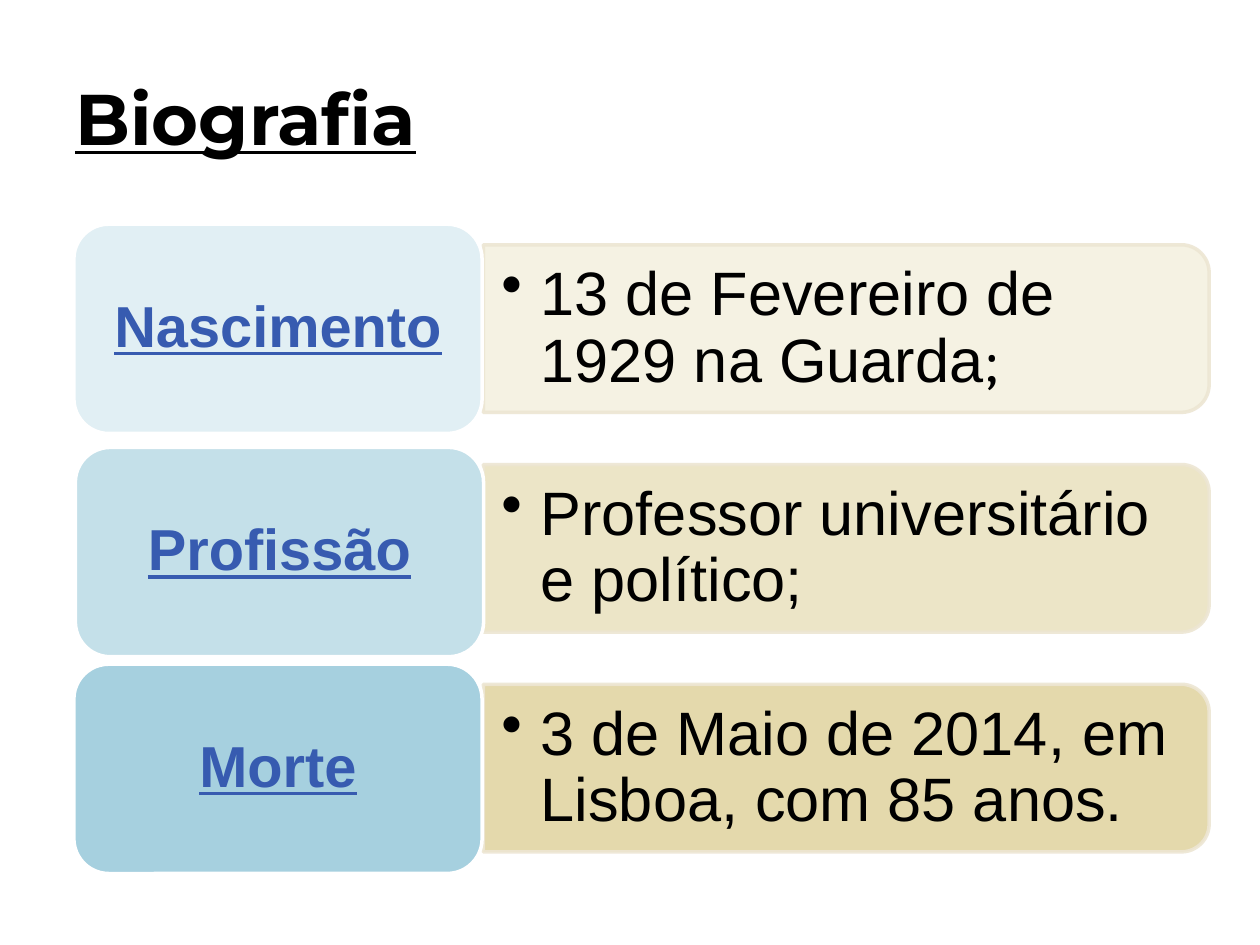
from dataclasses import dataclass

from lxml import etree
from pptx import Presentation
from pptx.dml import color
from pptx.enum import shapes, text
from pptx.oxml import ns
from pptx.util import Cm, Pt

ROW_PITCH = 4.43
PANEL_WIDTH, PANEL_LENGTH = 3.38, 14.63


@dataclass
class Fact:
    label: str
    detail: str
    label_fill: str
    detail_fill: str
    left: float
    top: float
    ending: str = ""  # closing mark set in Cambria


FACTS = [
    Fact("Nascimento", "13 de Fevereiro de 1929 na Guarda", "E1EFF4", "F5F1E0", 1.49, 4.52, ";"),
    Fact("Profissão", "Professor universitário e político;", "C4E0E9", "EBE3C2", 1.52, 9.02),
    Fact("Morte", "3 de Maio de 2014, em Lisboa, com 85 anos.", "A6D0DF", "E2D5A3", 1.49, 13.39),
]


def rgb(value: str) -> color.RGBColor:
    return color.RGBColor.from_string(value)


def set_font(font, name: str, size: float, hex_color: str, heading: bool = False) -> None:
    font.name, font.size = name, Pt(size)
    font.color.rgb = rgb(hex_color)
    font.bold = font.underline = heading


def set_frame(frame, side: float, vertical: float) -> None:
    frame.word_wrap = True
    frame.vertical_anchor = text.MSO_ANCHOR.MIDDLE
    frame.margin_left = frame.margin_right = Cm(side)
    frame.margin_top = frame.margin_bottom = Cm(vertical)


def add_box(slide, kind, left: float, top: float, width: float, height: float,
            fill: str, line: str):
    box = slide.shapes.add_shape(kind, Cm(left), Cm(top), Cm(width), Cm(height))
    box.shadow.inherit = False
    box.fill.solid()
    box.fill.fore_color.rgb = rgb(fill)
    box.line.color.rgb = rgb(line)
    box.line.width = Pt(2)
    return box


def add_panel(slide, fact: Fact, row: int) -> None:
    panel = add_box(slide, shapes.MSO_SHAPE.ROUND_2_SAME_RECTANGLE, 15.37,
                    -0.69 + row * ROW_PITCH, PANEL_WIDTH, PANEL_LENGTH,
                    fact.detail_fill, "EDE6D3")
    panel.rotation = 90
    # Slight transparency on fill and line
    for shade in panel._element.spPr.iter(ns.qn("a:srgbClr")):
        etree.SubElement(shade, ns.qn("a:alpha"), val="90000")


def add_detail(slide, fact: Fact, row: int) -> None:
    detail = slide.shapes.add_textbox(Cm(9.73), Cm(5.11 + row * ROW_PITCH), Cm(14.48), Cm(3.05))
    set_frame(detail.text_frame, 0.38, 0.18)
    paragraph = detail.text_frame.paragraphs[0]
    paragraph.line_spacing = 0.9
    set_font(paragraph.font, "Arial", 35, "000000")
    paragraph.add_run().text = fact.detail
    if fact.ending:
        ending = paragraph.add_run()
        ending.text = fact.ending
        ending.font.name = "Cambria"
    # Hanging bullet
    properties = paragraph._p.get_or_add_pPr()
    properties.set("marL", str(Cm(0.79)))
    properties.set("indent", str(-Cm(0.79)))
    bullet = etree.Element(ns.qn("a:buChar"), char="•")
    properties.find(ns.qn("a:defRPr")).addprevious(bullet)


def add_label(slide, fact: Fact) -> None:
    label = add_box(slide, shapes.MSO_SHAPE.ROUNDED_RECTANGLE, fact.left, fact.top,
                    8.23, 4.22, fact.label_fill, "FFFFFF")
    set_frame(label.text_frame, 0.36, 0.18)
    paragraph = label.text_frame.paragraphs[0]
    paragraph.text = fact.label
    paragraph.alignment = text.PP_ALIGN.CENTER
    paragraph.line_spacing = 0.9
    set_font(paragraph.font, "Arial", 33, "375BB0", heading=True)


def main() -> None:
    prs = Presentation()
    prs.slide_width, prs.slide_height = Cm(25.4), Cm(19.05)
    slide = prs.slides.add_slide(prs.slide_layouts[6])

    # Title
    title = slide.shapes.add_textbox(Cm(1.27), Cm(0.76), Cm(22.86), Cm(3.18))
    set_frame(title.text_frame, 0.25, 0.13)
    heading = title.text_frame.paragraphs[0]
    heading.text = "Biografia"
    set_font(heading.font, "Montserrat", 41, "000000", heading=True)

    # One row per fact
    for row, fact in enumerate(FACTS):
        add_panel(slide, fact, row)
        add_detail(slide, fact, row)
        add_label(slide, fact)

    prs.save("out.pptx")


if __name__ == "__main__":
    main()
